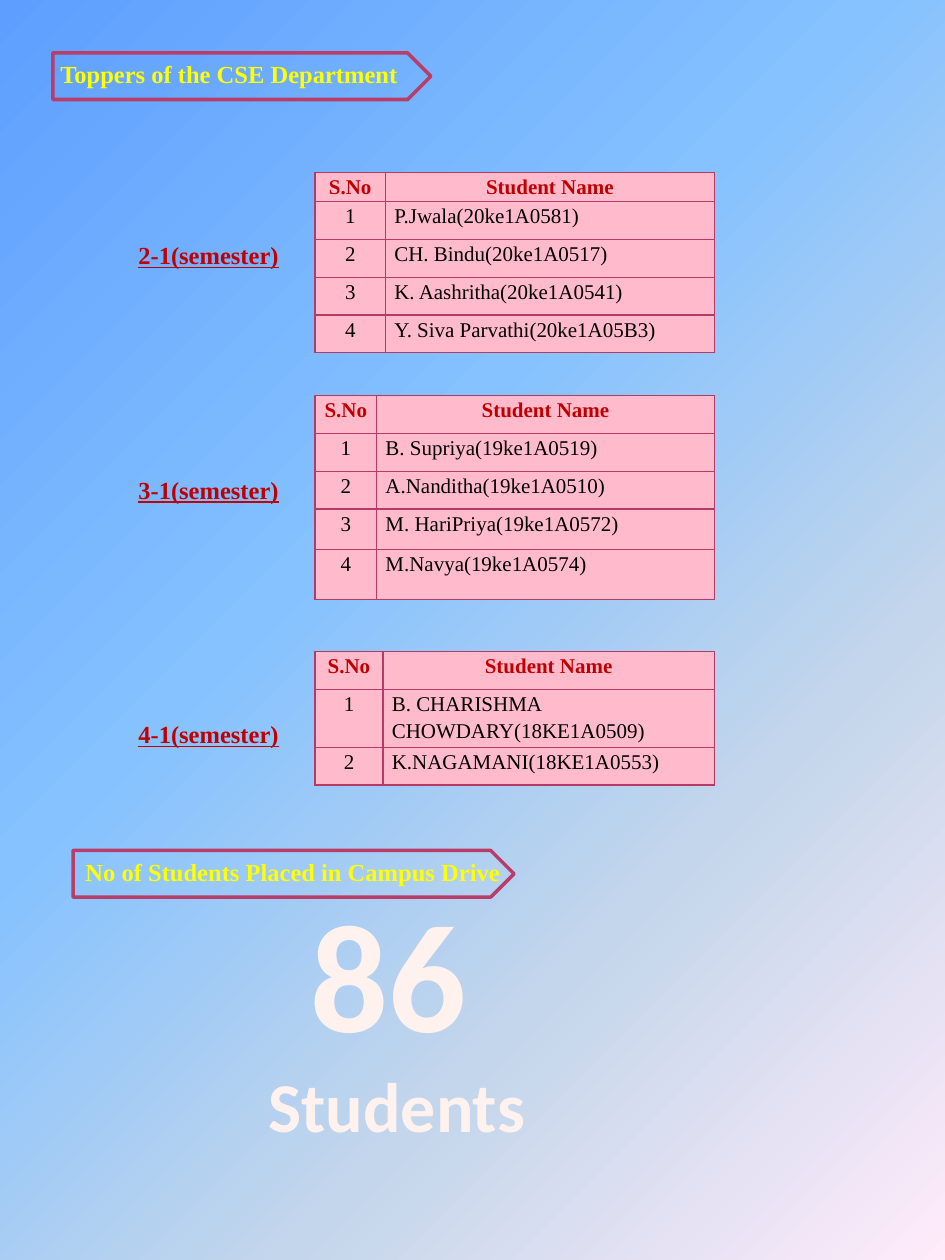
from dataclasses import dataclass
from lxml import etree
from pptx import Presentation
from pptx.dml.color import RGBColor
from pptx.enum.shapes import MSO_SHAPE
from pptx.enum.text import MSO_ANCHOR, MSO_AUTO_SIZE, PP_ALIGN
from pptx.oxml import parse_xml
from pptx.oxml.ns import qn
from pptx.util import Inches, Pt

ARROW = MSO_SHAPE.PENTAGON
GROW = MSO_AUTO_SIZE.SHAPE_TO_FIT_TEXT
TOP = MSO_ANCHOR.TOP
LEFT, CENTER = PP_ALIGN.LEFT, PP_ALIGN.CENTER
WIDTH, HEIGHT = Inches(7.5), Inches(10)
SPACE = "http://schemas.openxmlformats.org/drawingml/2006/main"


@dataclass(frozen=True)
class Theme:
    serif: str = "Times New Roman"
    sans: str = "Calibri"
    edge: str = "B83D68"
    rule: str = "B73965"
    cell: str = "FFBBCB"
    red: str = "C00000"
    black: str = "000000"
    yellow: str = "FFFF00"
    cream: str = "FFF2EE"
    stops: tuple = ((0, "5E9EFF"), (40, "85C2FF"), (70, "C4D6EB"), (100, "FFEBFA"))
    body: int = 12
    head: int = 14
    word: int = 40
    count: int = 88


THEME = Theme()

TERMS = [
    ("2-1(semester)", (1, 1.37, 4.67, 1.41), 0.49, 0.56, (0.11, 0.3, 0.3, 0.3, 0.3),
     ["P.Jwala(20ke1A0581)", "CH. Bindu(20ke1A0517)",
      "K. Aashritha(20ke1A0541)", "Y. Siva Parvathi(20ke1A05B3)"]),
    ("3-1(semester)", (1, 3.14, 4.67, 1.61), 0.58, 0.49, (0.3, 0.3, 0.3, 0.32, 0.4),
     ["B. Supriya(19ke1A0519)", "A.Nanditha(19ke1A0510)",
      "M. HariPriya(19ke1A0572)", "M.Navya(19ke1A0574)"]),
    ("4-1(semester)", (1, 5.17, 4.67, 1.05), 0.49, 0.54, (0.3, 0.3, 0.3),
     ["B. CHARISHMA CHOWDARY(18KE1A0509)", "K.NAGAMANI(18KE1A0553)"]),
]


def place(*box):
    return [Inches(part) for part in box]


def style(run, size, color, bold=True, face=THEME.serif, under=None):
    font = run.font
    font.name, font.size, font.bold, font.underline = face, Pt(size), bold, under
    font.color.rgb = RGBColor.from_string(color)


def write(slide, box, text, color, wrap=True, under=None):
    frame = slide.shapes.add_textbox(*place(*box)).text_frame
    frame.word_wrap, frame.auto_size = wrap, GROW
    frame.text = text
    style(frame.paragraphs[0].runs[0], THEME.head, color, under=under)


def paint(slide):
    fill = slide.background.fill
    fill.gradient()
    grad = slide.background._cSld.find(".//" + qn("a:gradFill"))
    for child in list(grad):
        grad.remove(child)
    stops = "".join(f'<a:gs pos="{at * 1000}"><a:srgbClr val="{color}"/></a:gs>'
                    for at, color in THEME.stops)
    grad.append(parse_xml(f'<a:gsLst xmlns:a="{SPACE}">{stops}</a:gsLst>'))
    grad.append(parse_xml(f'<a:lin xmlns:a="{SPACE}" ang="2700000" scaled="0"/>'))


def banner(slide, box, text, shift, width):
    left, top, _, _ = box
    arrow = slide.shapes.add_shape(ARROW, *place(*box))
    arrow.shadow.inherit = False
    arrow.fill.background()
    arrow.line.color.rgb = RGBColor.from_string(THEME.edge)
    arrow.line.width = Pt(2)
    write(slide, (left + shift, top, width, 0.34), text, THEME.yellow)


def border(cell):
    props = cell._tc.get_or_add_tcPr()
    for spot, side in enumerate(("lnL", "lnR", "lnT", "lnB")):
        line = etree.Element(qn("a:" + side), w=str(Pt(0.75)))
        fill = etree.SubElement(line, qn("a:solidFill"))
        etree.SubElement(fill, qn("a:srgbClr"), val=THEME.rule)
        props.insert(spot, line)


def fill_cell(cell, text, color, bold, align):
    cell.margin_left = cell.margin_right = Inches(0.07)
    cell.margin_top = cell.margin_bottom = 0
    cell.vertical_anchor = TOP
    cell.fill.solid()
    cell.fill.fore_color.rgb = RGBColor.from_string(THEME.cell)
    border(cell)
    cell.text_frame.text = text
    para = cell.text_frame.paragraphs[0]
    para.alignment, para.line_spacing, para.space_after = align, 1.15, Pt(10)
    style(para.runs[0], THEME.body, color, bold)


def term(slide, box, title, drop, first, rows, names):
    left, top, width, height = box
    inset = 1.5
    write(slide, (left, top + drop, 1.33, 0.34), title, THEME.red, False, True)
    span = width - inset
    frame = slide.shapes.add_table(len(rows), 2, *place(left + inset, top, span, height))
    table = frame.table
    table.first_row = table.horz_banding = False
    for col, size in zip(table.columns, (first, span - first)):
        col.width = Inches(size)
    for row, size in zip(table.rows, rows):
        row.height = Inches(size)
    lines = [("S.No", "Student Name")] + [(str(n), name) for n, name in enumerate(names, 1)]
    for r, line in enumerate(lines):
        for c, text in enumerate(line):
            fill_cell(table.cell(r, c), text, THEME.black if r else THEME.red,
                      r == 0, LEFT if r and c else CENTER)


def total(slide, box, count, word):
    frame = slide.shapes.add_textbox(*place(*box)).text_frame
    frame.word_wrap, frame.auto_size = True, GROW
    frame.text = f"{count}\n{word}"
    first, last = frame.paragraphs
    first.add_run().text = " "
    runs = (*first.runs, *last.runs)
    for run, size in zip(runs, (THEME.count, THEME.word, THEME.word)):
        style(run, size, THEME.cream, face=THEME.sans)
    first.alignment = last.alignment = CENTER


def main():
    deck = Presentation()
    deck.slide_width, deck.slide_height = WIDTH, HEIGHT
    slide = deck.slides.add_slide(deck.slide_layouts[6])
    paint(slide)
    banner(slide, (0.42, 0.42, 3, 0.37), "Toppers of the CSE Department", -0.04, 3.21)
    for title, box, drop, first, rows, names in TERMS:
        term(slide, box, title, drop, first, rows, names)
    banner(slide, (0.58, 6.75, 3.5, 0.37), "No of Students Placed in Campus Drive", 0, 3.75)
    total(slide, (0.38, 6.92, 5.54, 2.26), "86", "Students")
    deck.save("out.pptx")


if __name__ == "__main__":
    main()
